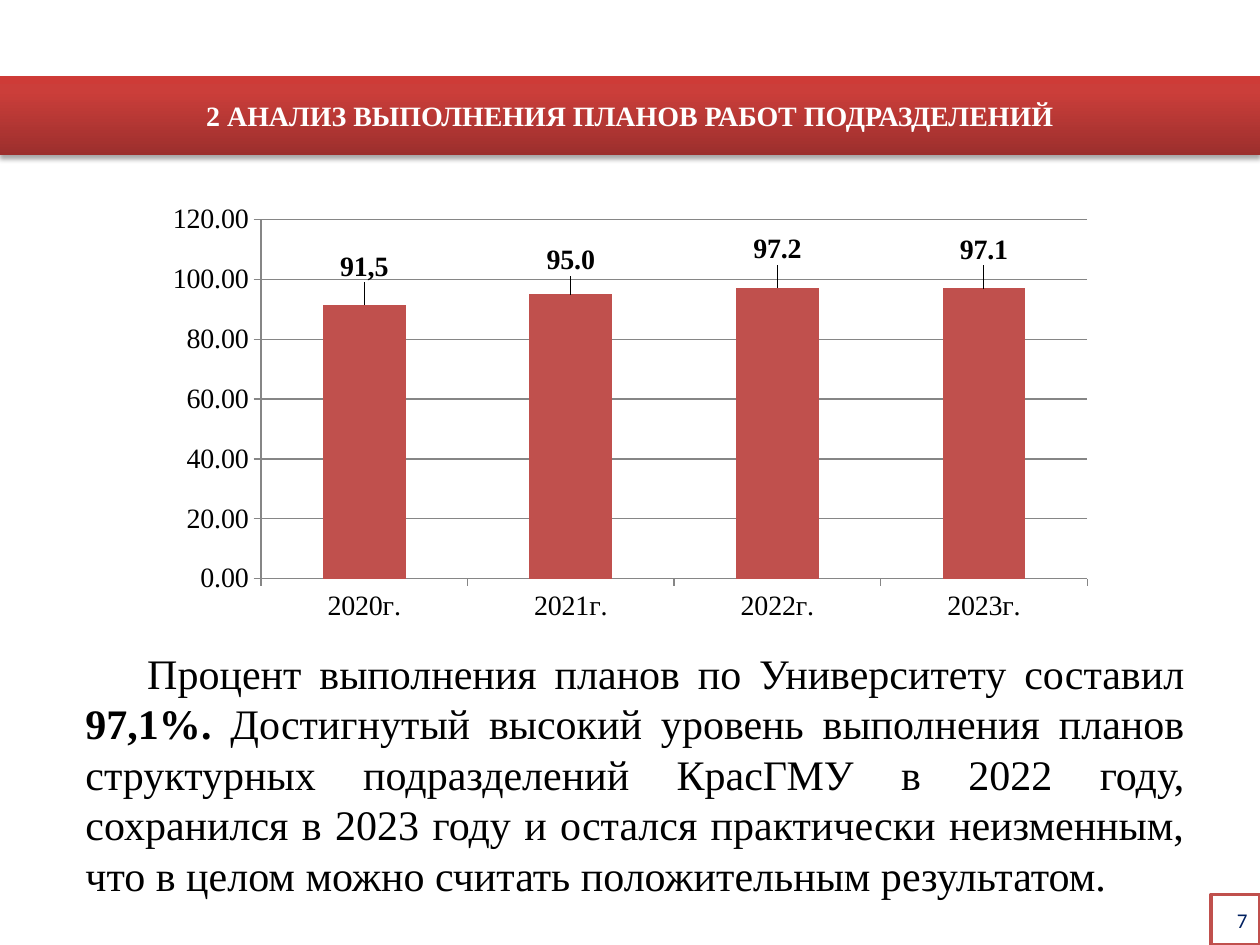
import pptx
import pptx.chart.data
import pptx.dml.color
import pptx.enum.chart
import pptx.enum.shapes
import pptx.enum.text
import pptx.oxml
import pptx.oxml.ns
import pptx.util
from pptx.util import Inches

SERIF = "Times New Roman"
ALIGN = pptx.enum.text.PP_ALIGN
MIDDLE = pptx.enum.text.MSO_ANCHOR.MIDDLE


def rgb(value):
    return pptx.dml.color.RGBColor.from_string(value)


def style(font, size, color="000000", name=SERIF, bold=False):
    font.size = pptx.util.Pt(size)
    font.name = name
    font.bold = bold
    font.color.rgb = rgb(color)


prs = pptx.Presentation()
prs.slide_width, prs.slide_height = Inches(10), Inches(7.5)
s = prs.slides.add_slide(prs.slide_layouts[5])

# Title band
title = s.shapes.title
title.left, title.top, title.width, title.height = Inches(0), Inches(0.6), Inches(10), Inches(0.63)
A_NS = pptx.oxml.ns.nsdecls("a")
stops = "".join(
    f'<a:gs pos="{pos * 1000}"><a:srgbClr val="{color}"/></a:gs>'
    for pos, color in [(0, "9C2F2D"), (80, "CB3E3A"), (100, "CE3B37")]
)
gradient = f'<a:gradFill {A_NS}><a:gsLst>{stops}</a:gsLst><a:lin ang="16200000" scaled="0"/></a:gradFill>'
shadow = (
    f'<a:effectLst {A_NS}><a:outerShdw blurRad="39370" dist="22860" dir="5400000" rotWithShape="0">'
    '<a:srgbClr val="000000"><a:alpha val="35000"/></a:srgbClr></a:outerShdw></a:effectLst>'
)
for xml in (gradient, shadow):
    title.element.spPr.append(pptx.oxml.parse_xml(xml))
tf = title.text_frame
tf.text = "2 АНАЛИЗ ВЫПОЛНЕНИЯ ПЛАНОВ РАБОТ ПОДРАЗДЕЛЕНИЙ"
tf.vertical_anchor = MIDDLE
tf.paragraphs[0].alignment = ALIGN.CENTER
style(tf.paragraphs[0].runs[0].font, 16, "FFFFFF", bold=True)

# Page number
page = s.shapes.add_shape(
    pptx.enum.shapes.MSO_SHAPE.RECTANGLE, Inches(9.61), Inches(7.1), Inches(0.39), Inches(0.4)
)
page.shadow.inherit = False
page.fill.solid()
page.fill.fore_color.rgb = rgb("FFFFFF")
page.line.color.rgb = rgb("C0504D")
page.line.width = pptx.util.Pt(2)
tf = page.text_frame
tf.text = "7"
tf.vertical_anchor = MIDDLE
tf.paragraphs[0].alignment = ALIGN.RIGHT
style(tf.paragraphs[0].runs[0].font, 12, "002060", "Calibri")

# Conclusion
box = s.shapes.add_textbox(Inches(0.58), Inches(5.09), Inches(8.92), Inches(2.12))
tf = box.text_frame
tf.word_wrap = True
tf.auto_size = pptx.enum.text.MSO_AUTO_SIZE.SHAPE_TO_FIT_TEXT
p = tf.paragraphs[0]
p.alignment = ALIGN.JUSTIFY
p._p.get_or_add_pPr().set("indent", str(Inches(0.49)))
for text, bold in [
    ("Процент выполнения планов по Университету составил ", False),
    ("97,1%. ", True),
    ("Достигнутый высокий уровень выполнения планов структурных подразделений КрасГМУ "
     "в 2022 году, сохранился в 2023 году и остался практически неизменным, "
     "что в целом можно считать положительным результатом. ", False),
]:
    r = p.add_run()
    r.text = text
    style(r.font, 24, bold=bold)

# Completion by year
data = pptx.chart.data.CategoryChartData()
data.categories = ["2020г.", "2021г.", "2022г.", "2023г."]
data.add_series("Series 1", (91.5, 95, 97.2, 97.1))
chart = s.shapes.add_chart(
    pptx.enum.chart.XL_CHART_TYPE.COLUMN_CLUSTERED,
    Inches(1.22), Inches(1.55), Inches(7.56), Inches(3.46), data,
).chart
style(chart.font, 18, name="Calibri")
chart.has_legend = False
chart.has_title = False

values = chart.value_axis
values.minimum_scale, values.maximum_scale, values.major_unit = 0, 120, 20
values.has_major_gridlines = True
values.major_gridlines.format.line.color.rgb = rgb("868686")
values.tick_labels.number_format = "0.00"
values.tick_labels.number_format_is_linked = False
for axis in (values, chart.category_axis):
    axis.major_tick_mark = pptx.enum.chart.XL_TICK_MARK.OUTSIDE
    axis.format.line.color.rgb = rgb("868686")
    style(axis.tick_labels.font, 16)

plot = chart.plots[0]
plot.gap_width = 150
plot.vary_by_categories = False
series = plot.series[0]
series.format.fill.solid()
series.format.fill.fore_color.rgb = rgb("C0504D")

labels = series.data_labels
labels.show_value = True
labels.number_format = "#,##0.0"
labels.number_format_is_linked = False
style(labels.font, 16, bold=True)
for i in range(4):
    label = series.points[i].data_label
    if i == 0:
        label.text_frame.text = "91,5"
        style(label.text_frame.paragraphs[0].runs[0].font, 16, bold=True)
    else:
        style(label.font, 16, bold=True)
    label.position = pptx.enum.chart.XL_LABEL_POSITION.OUTSIDE_END

# Raise the labels above the bars
C_NS = pptx.oxml.ns.nsdecls("c")
for i, label in enumerate(series._element.xpath("c:dLbls/c:dLbl")):
    lift = -0.04 if i != 1 else -0.03
    label.insert(1, pptx.oxml.parse_xml(
        f'<c:layout {C_NS}><c:manualLayout><c:x val="0"/><c:y val="{lift}"/></c:manualLayout></c:layout>'
    ))
    if i > 0:
        label.insert(2, pptx.oxml.parse_xml(
            f'<c:numFmt {C_NS} formatCode="#,##0.0" sourceLinked="0"/>'
        ))

prs.save("out.pptx")
